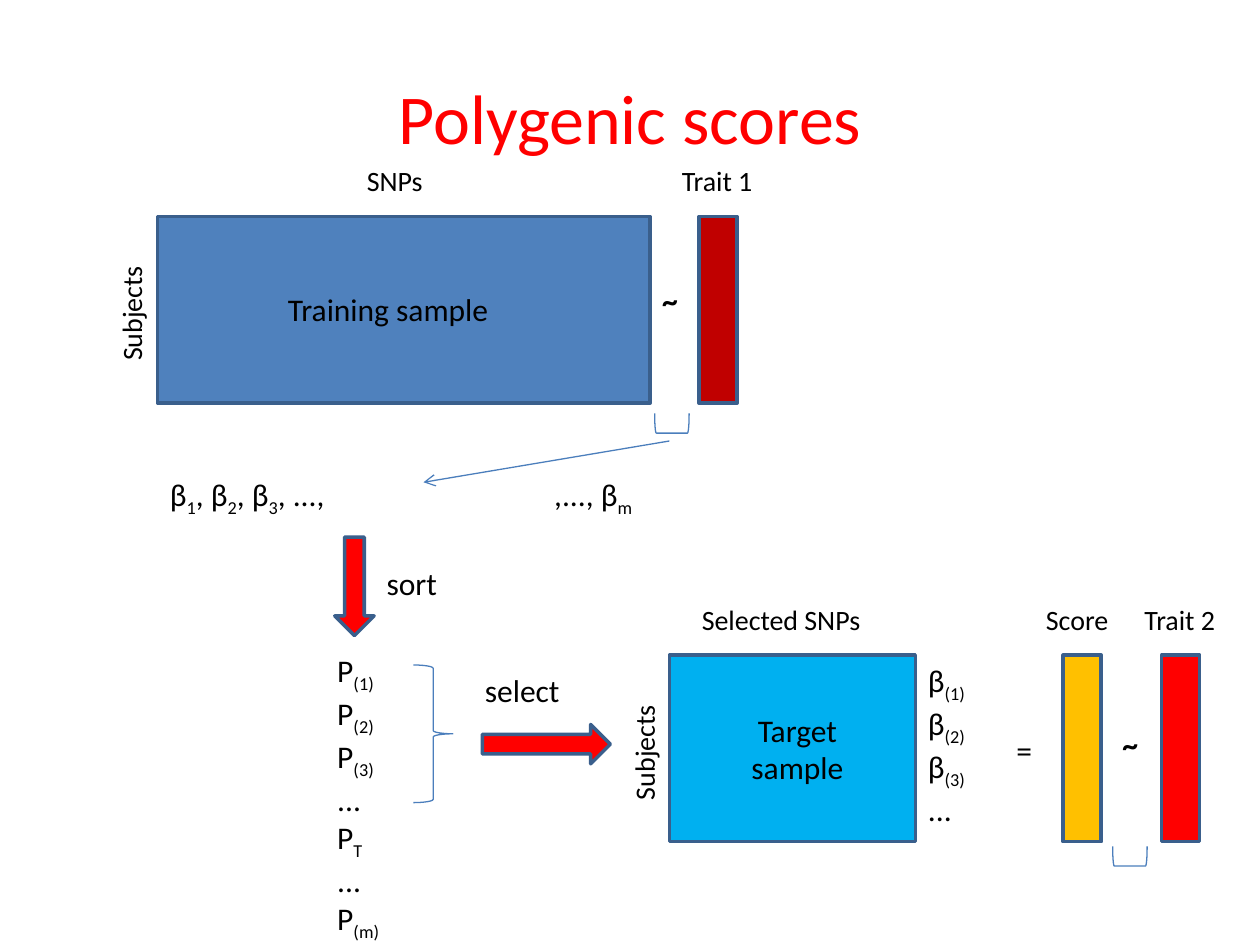
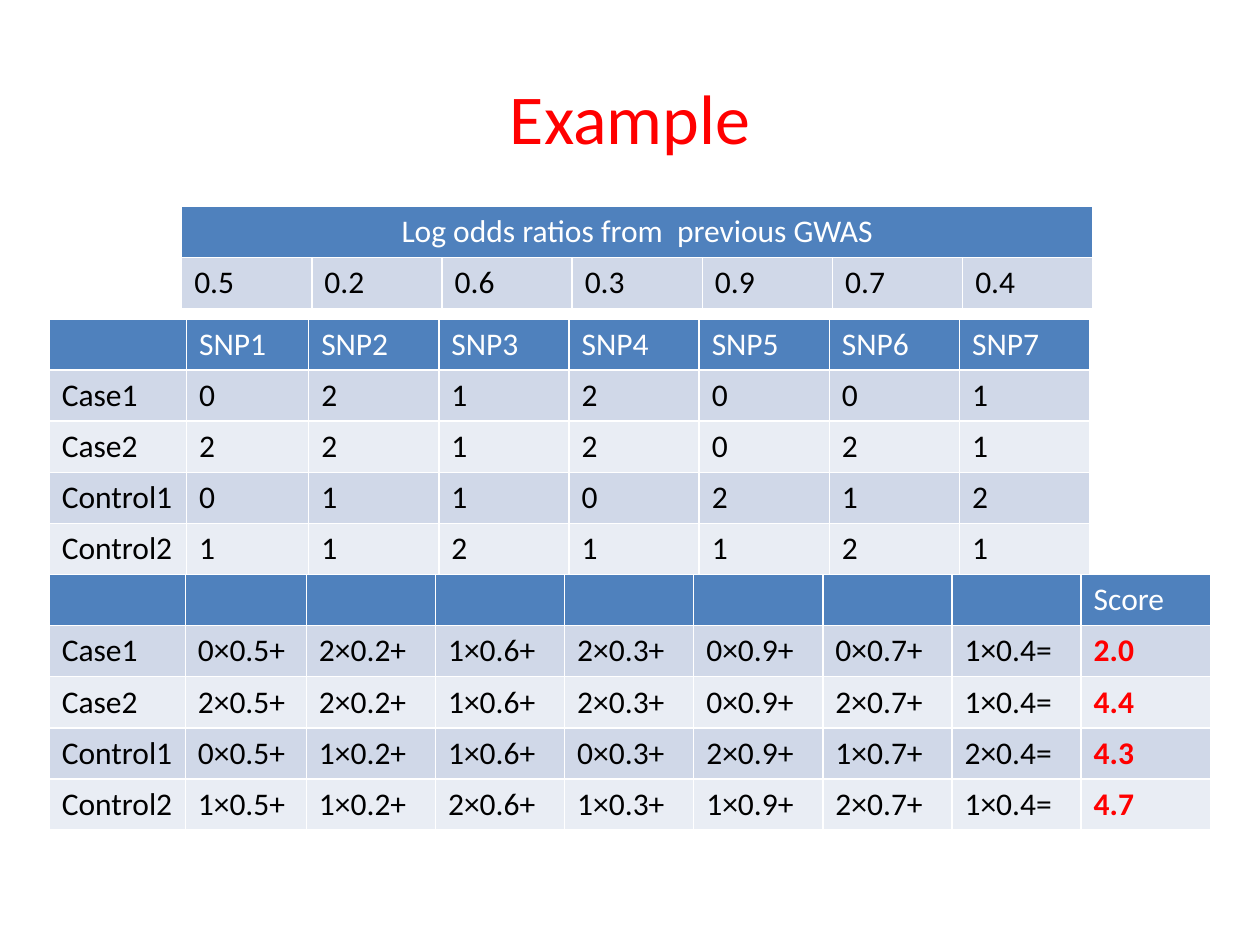
"""Build two slides that explain polygenic scores and work through an example."""
from dataclasses import dataclass

from lxml.etree import SubElement
from pptx import Presentation
from pptx.dml.color import RGBColor
from pptx.enum.shapes import MSO_CONNECTOR, MSO_SHAPE
from pptx.enum.text import MSO_ANCHOR, PP_ALIGN
from pptx.oxml.ns import qn
from pptx.util import Pt

COLORS = {
    "black": "000000", "white": "FFFFFF", "red": "FF0000", "dark_red": "C00000",
    "blue": "4F81BD", "sky": "00B0F0", "gold": "FFC000", "outline": "3A5F8C",
    "thin_line": "4B7EBC", "odd_row": "D0D8E8", "even_row": "E9EDF4",
}
FONT = "Calibri"
BLOCK_HEIGHT = 106.6
TRAIT_WIDTH = 21.8
TRAINING_TOP, TARGET_TOP = 123.8, 374.4
TRAINING_LABEL_TOP, TARGET_LABEL_TOP = 90, 340.6
TABLE_LEFT = 28.1
ROW_HEIGHT = 29.2


@dataclass
class Label:
    left: float
    top: float
    width: float
    height: float
    text: str
    size: float = 18
    bold: bool = False
    align: PP_ALIGN = PP_ALIGN.LEFT
    rotation: float = 0
    wrap: bool = True


@dataclass
class Block:
    kind: MSO_SHAPE
    left: float
    top: float
    width: float
    height: float
    fill: str | None = None
    line: str = "outline"
    line_width: float = 2
    rotation: float = 0


@dataclass
class Grid:
    left: float
    top: float
    columns: list[float]
    rows: list[list[str]]
    score_column: int | None = None
    merged_header: bool = False


def caption(left: float, top: float, width: float, text: str, rotation: float = 0) -> Label:
    """Return a small heading for a block of the diagram."""
    return Label(left, top, width, 26.6, text, size=16, rotation=rotation)


def trait(left: float, top: float, fill: str) -> Block:
    """Return a narrow column that stands for one variable."""
    return Block(MSO_SHAPE.RECTANGLE, left, top, TRAIT_WIDTH, BLOCK_HEIGHT, fill)


def thin(kind: MSO_SHAPE, left: float, top: float, width: float, height: float,
         rotation: float = 0) -> Block:
    """Return an unfilled brace or bracket."""
    return Block(kind, left, top, width, height, None, "thin_line", 0.75, rotation)


BLOCKS = [
    Block(MSO_SHAPE.RECTANGLE, 90, TRAINING_TOP, 281.5, BLOCK_HEIGHT, "blue"),
    trait(399.4, TRAINING_TOP, "dark_red"),
    Block(MSO_SHAPE.RECTANGLE, 382.5, TARGET_TOP, 140.6, BLOCK_HEIGHT, "sky"),
    trait(607.5, TARGET_TOP, "gold"),
    trait(663.8, TARGET_TOP, "red"),
    Block(MSO_SHAPE.DOWN_ARROW, 191.3, 306.9, 22.5, 56.3, "red"),
    Block(MSO_SHAPE.RIGHT_ARROW, 275.6, 414, 73.2, 22.5, "red"),
    thin(MSO_SHAPE.RIGHT_BRACE, 236.3, 380, 22.5, 78.7),
    thin(MSO_SHAPE.LEFT_BRACKET, 378.3, 232, 11.3, 19.7, 270),
    thin(MSO_SHAPE.LEFT_BRACKET, 640, 479.4, 11.3, 19.7, 270),
]
LABELS = [
    caption(202.5, TRAINING_LABEL_TOP, 118, "SNPs"),
    caption(382.5, TRAINING_LABEL_TOP, 62, "Trait 1"),
    caption(16, 141, 118, "Subjects", 270),
    caption(394, TARGET_LABEL_TOP, 130, "Selected SNPs"),
    caption(590.6, TARGET_LABEL_TOP, 62, "Score"),
    caption(646.9, TARGET_LABEL_TOP, 62, "Trait 2"),
    caption(309, 392, 118, "Subjects", 270),
    Label(157.5, 162, 157.5, 29, "Training sample"),
    Label(399.4, 402.5, 112.5, 51, "Target sample", align=PP_ALIGN.CENTER),
    Label(90, 268, 118, 29, "β|1|, β|2|, β|3|, ...,"),
    Label(309.6, 268, 67.5, 29, ",..., β|m|"),
    Label(213.8, 318.5, 62, 29, "sort"),
    Label(270, 380, 78.7, 29, "select"),
    Label(185.6, 368.7, 50.6, 160, "P|(1)|\nP|(2)|\nP|(3)|\n...\nP|T|\n...\nP|(m)|"),
    Label(523.2, 374.4, 50.6, 94, "β|(1)|\nβ|(2)|\nβ|(3)|\n..."),
    Label(573.8, 414, 25, 29, "=", wrap=False),
    Label(371.3, 157, 51, 29, "~", bold=True),
    Label(634.3, 411, 51, 29, "~", bold=True),
]

LOG_ODDS = ["0.5", "0.2", "0.6", "0.3", "0.9", "0.7", "0.4"]
GENOTYPES = {"Case1": "0212001", "Case2": "2212021",
             "Control1": "0110212", "Control2": "1121121"}
SCORES = {"Case1": "2.0", "Case2": "4.4", "Control1": "4.3", "Control2": "4.7"}


def color(name: str) -> RGBColor:
    """Look up a named colour."""
    return RGBColor.from_string(COLORS[name])


def apply_format(target: object, values: dict) -> None:
    """Set each named attribute of an object."""
    for name, value in values.items():
        setattr(target, name, value)


def format_font(font: object, size: float, color_name: str, bold: bool = False) -> None:
    """Apply the shared typeface with a size, colour and weight."""
    apply_format(font, {"name": FONT, "size": Pt(size), "bold": bold})
    font.color.rgb = color(color_name)


def add_titled_slide(presentation: object, title: str) -> object:
    """Add a slide with the shared red title."""
    slide = presentation.slides.add_slide(presentation.slide_layouts[5])
    shape = slide.shapes.title
    apply_format(shape, {"left": Pt(36), "top": Pt(21.6), "width": Pt(648), "height": Pt(90)})
    shape.text_frame.text = title
    shape.text_frame.vertical_anchor = MSO_ANCHOR.MIDDLE
    paragraph = shape.text_frame.paragraphs[0]
    paragraph.alignment = PP_ALIGN.CENTER
    format_font(paragraph.runs[0].font, 40, "red")
    return slide


def add_block(slide: object, block: Block) -> None:
    """Draw one preset shape."""
    box = map(Pt, (block.left, block.top, block.width, block.height))
    shape = slide.shapes.add_shape(block.kind, *box)
    shape.shadow.inherit = False
    shape.rotation = block.rotation
    if block.fill:
        shape.fill.solid()
        shape.fill.fore_color.rgb = color(block.fill)
    else:
        shape.fill.background()
    shape.line.color.rgb = color(block.line)
    shape.line.width = Pt(block.line_width)


def add_label(slide: object, label: Label) -> None:
    """Write a text box in which bars enclose subscripts."""
    box = map(Pt, (label.left, label.top, label.width, label.height))
    shape = slide.shapes.add_textbox(*box)
    shape.rotation = label.rotation
    frame = shape.text_frame
    frame.word_wrap = label.wrap
    for index, line in enumerate(label.text.split("\n")):
        paragraph = frame.add_paragraph() if index else frame.paragraphs[0]
        paragraph.alignment = label.align
        for position, part in enumerate(line.split("|")):
            if part:
                run = paragraph.add_run()
                run.text = part
                format_font(run.font, label.size, "black", label.bold)
                if position % 2:
                    run._r.get_or_add_rPr().set("baseline", "-25000")


def add_arrow(slide: object, start: tuple[float, float], end: tuple[float, float]) -> None:
    """Draw a thin straight line with an open arrowhead at its end."""
    connector = slide.shapes.add_connector(MSO_CONNECTOR.STRAIGHT, *map(Pt, start + end))
    connector.line.color.rgb = color("thin_line")
    connector.line.width = Pt(0.75)
    SubElement(connector.line._get_or_add_ln(), qn("a:tailEnd"), type="arrow")
    SubElement(connector._element.spPr, qn("a:effectLst"))


def add_grid(slide: object, grid: Grid) -> None:
    """Draw a banded table with a blue header row."""
    row_count, column_count = len(grid.rows), len(grid.columns)
    table = slide.shapes.add_table(
        row_count, column_count, Pt(grid.left), Pt(grid.top),
        Pt(sum(grid.columns)), Pt(ROW_HEIGHT * row_count)).table
    for column, width in zip(table.columns, grid.columns):
        column.width = Pt(width)
    for row_index, values in enumerate(grid.rows):
        table.rows[row_index].height = Pt(ROW_HEIGHT)
        band = "odd_row" if row_index % 2 else "even_row"
        for column_index, value in enumerate(values):
            cell = table.cell(row_index, column_index)
            cell.fill.solid()
            cell.fill.fore_color.rgb = color(band if row_index else "blue")
            cell.text = value
            is_score = row_index > 0 and column_index == grid.score_column
            text_color = "red" if is_score else "black" if row_index else "white"
            format_font(cell.text_frame.paragraphs[0].font, 18, text_color, is_score)
    if grid.merged_header:
        table.cell(0, 0).merge(table.cell(0, column_count - 1))
        table.cell(0, 0).text_frame.paragraphs[0].alignment = PP_ALIGN.CENTER


def score_row(subject: str) -> list[str]:
    """Write out the weighted sum for one subject."""
    terms = [f"{count}×{weight}" for count, weight in zip(GENOTYPES[subject], LOG_ODDS)]
    return [subject, *(f"{term}+" for term in terms[:-1]), f"{terms[-1]}=", SCORES[subject]]


def build_diagram(presentation: object) -> None:
    """Build the slide that shows the method."""
    slide = add_titled_slide(presentation, "Polygenic scores")
    for block in BLOCKS:
        add_block(slide, block)
    add_arrow(slide, (382.5, 252), (242, 275.6))
    for label in LABELS:
        add_label(slide, label)


def build_example(presentation: object) -> None:
    """Build the slide that shows the weights, genotypes and scores."""
    slide = add_titled_slide(presentation, "Example")
    snp_count = len(LOG_ODDS)
    heading = ["Log odds ratios from  previous GWAS"] + [""] * (snp_count - 1)
    snp_names = [f"SNP{number}" for number in range(1, snp_count + 1)]
    grids = [
        Grid(TABLE_LEFT, 182.3, [78.5, 69.8] + [74.4] * 6,
             [["", *snp_names], *([name, *counts] for name, counts in GENOTYPES.items())]),
        Grid(103.8, 118, [74.4] * snp_count, [heading, LOG_ODDS], merged_header=True),
        Grid(TABLE_LEFT, 328.3, [77.8, 69.2] + [73.8] * 7,
             [[""] * (snp_count + 1) + ["Score"], *map(score_row, GENOTYPES)],
             score_column=snp_count + 1),
    ]
    for grid in grids:
        add_grid(slide, grid)


def main() -> None:
    """Create and save the presentation."""
    presentation = Presentation()
    apply_format(presentation, {"slide_width": Pt(720), "slide_height": Pt(540)})
    build_diagram(presentation)
    build_example(presentation)
    presentation.save("out.pptx")


if __name__ == "__main__":
    main()
